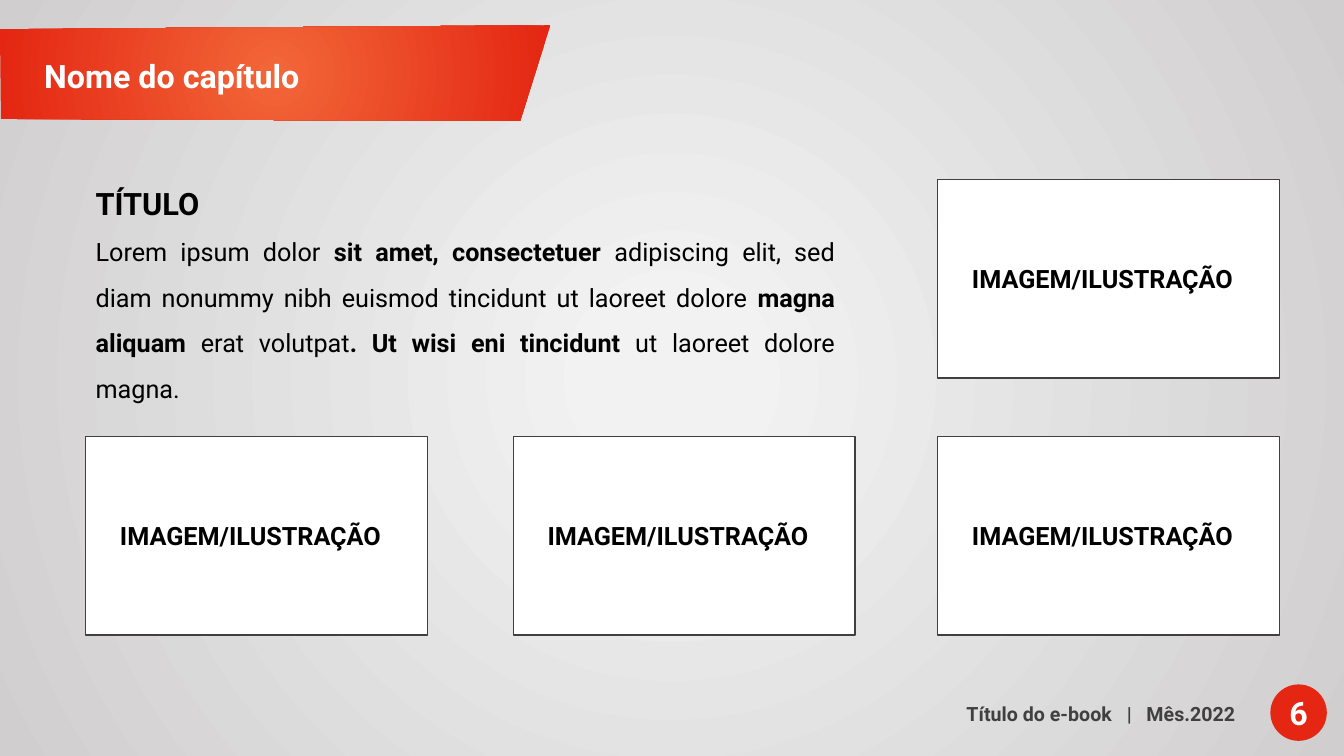
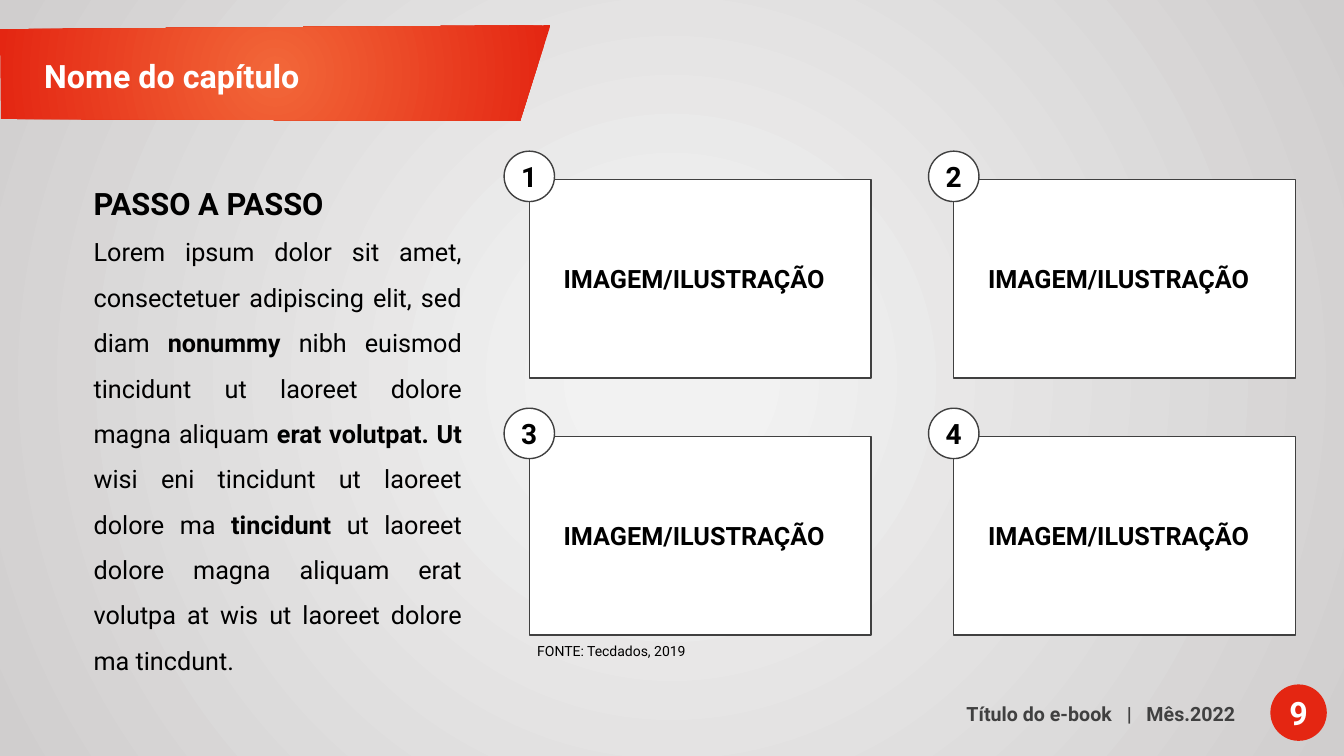
from itertools import product

from pptx import Presentation
from pptx.dml.color import RGBColor
from pptx.enum.shapes import MSO_SHAPE as Shape
from pptx.enum.text import MSO_ANCHOR as Anchor, MSO_AUTO_SIZE as AutoSize, PP_ALIGN as Align
from pptx.oxml import parse_xml
from pptx.oxml.ns import nsdecls, qn
from pptx.util import Inches, Pt

COLORS = {
    "white": "FFFFFF", "black": "000000", "gray": "404040", "red": "E42612",
    "orange": "F26739", "light": "F2F2F2", "silver": "D0CECE",
}
FONT = "Roboto"
WIDTH, HEIGHT = 13.33, 7.5
IMAGE_W, IMAGE_H = 3.39, 1.97
BADGE = 0.5
TOP_ROW, BOTTOM_ROW = 1.78, 4.33


def rgb(name):
    return RGBColor.from_string(COLORS[name])


def write(p, text, size=18, color="black", bold=True, spacing=0):
    """Add a run; spacing is extra space after each character, in points."""
    r = p.add_run()
    r.text = text
    r.font.name, r.font.size, r.font.bold = FONT, Pt(size), bold
    r.font.color.rgb = rgb(color)
    if spacing:
        r._r.get_or_add_rPr().set("spc", str(spacing * 100))


class Deck:
    def __init__(self):
        self.prs = Presentation()
        self.prs.slide_width, self.prs.slide_height = Inches(WIDTH), Inches(HEIGHT)
        self.s = None

    def style(self, sp, fill, line=None):
        sp.shadow.inherit = False
        sp.fill.solid()
        sp.fill.fore_color.rgb = rgb(fill)
        if line:
            sp.line.color.rgb = rgb(line)
            sp.line.width = Pt(1)
        else:
            sp.line.fill.background()

    def radial(self, sp, inner, outer, start=0):
        """Fill a shape with a circular gradient from its centre."""
        self.style(sp, outer)
        sp.fill.gradient()
        for stop, color, pos in zip(sp.fill.gradient_stops, (inner, outer), (start, 1)):
            stop.color.rgb = rgb(color)
            stop.position = pos
        grad = sp._element.spPr.find(qn("a:gradFill"))
        grad.remove(grad.find(qn("a:lin")))
        grad.append(parse_xml(
            f'<a:path {nsdecls("a")} path="circle">'
            '<a:fillToRect l="50000" t="50000" r="50000" b="50000"/></a:path>'))

    def shape(self, kind, x, y, w, h):
        return self.s.shapes.add_shape(kind, Inches(x), Inches(y), Inches(w), Inches(h))

    def textbox(self, x, y, w, h, align=Align.LEFT):
        """Add a text box and return its first paragraph and its frame."""
        tf = self.s.shapes.add_textbox(Inches(x), Inches(y), Inches(w), Inches(h)).text_frame
        tf.word_wrap = True
        tf.auto_size = AutoSize.SHAPE_TO_FIT_TEXT
        p = tf.paragraphs[0]
        p.alignment = align
        return p, tf

    def label(self, sp, text, align=Align.CENTER, indent=0, **fmt):
        """Write one line inside a shape, centred vertically."""
        tf = sp.text_frame
        tf.word_wrap = False
        tf.vertical_anchor = Anchor.MIDDLE
        tf.margin_left = Inches(indent)
        tf.margin_right = tf.margin_top = tf.margin_bottom = 0
        p = tf.paragraphs[0]
        p.alignment = align
        write(p, text, **fmt)

    def circle(self, x, y, d, text, fill, line=None, **fmt):
        sp = self.shape(Shape.OVAL, x, y, d, d)
        self.style(sp, fill, line)
        self.label(sp, text, **fmt)

    def image_box(self, x, y):
        sp = self.shape(Shape.RECTANGLE, x, y, IMAGE_W, IMAGE_H)
        self.style(sp, "white", "gray")
        self.label(sp, "IMAGEM/ILUSTRAÇÃO", align=Align.LEFT, indent=0.34)

    def band(self):
        corners = [(0, 0.29), (5.46, 0.25), (5.16, 1.2), (0.01, 1.18)]
        points = [(Inches(x), Inches(y)) for x, y in corners]
        fb = self.s.shapes.build_freeform(*points[0])
        fb.add_line_segments(points[1:], close=True)
        self.radial(fb.convert_to_shape(), "orange", "red")

    def footer(self, number):
        p, _ = self.textbox(5.7, 6.91, 6.65, 0.34, Align.RIGHT)
        for text, spacing in (("Título do e-book", 0), (" |", 7), (" Mês.2022", 0)):
            write(p, text, size=14, color="gray", spacing=spacing)
        self.circle(12.6, 6.79, 0.56, str(number), "red", size=23, color="white")

    def slide(self, chapter, number):
        self.s = self.prs.slides.add_slide(self.prs.slide_layouts[6])
        self.radial(self.shape(Shape.RECTANGLE, 0, 0, WIDTH, HEIGHT), "light", "silver", 0.09)
        self.band()
        p, _ = self.textbox(0.34, 0.51, 3.06, 0.49)
        write(p, chapter, size=23, color="white")
        self.footer(number)

    def body(self, x, w, h, heading, text):
        """Add a heading and a justified paragraph; *stars* mark bold words."""
        p, tf = self.textbox(x, 1.6, w, h, Align.JUSTIFY)
        write(p, heading, size=22)
        p.line_spacing = 1.5
        p = tf.add_paragraph()
        p.alignment, p.line_spacing = Align.JUSTIFY, 1.5
        for i, part in enumerate(text.split("*")):
            write(p, part, bold=i % 2 == 1)


def topic_slide(deck):
    deck.slide("Nome do capítulo", 6)
    deck.body(0.85, 7.53, 1.97, "TÍTULO",
              "Lorem ipsum dolor *sit amet, consectetuer *adipiscing elit, sed diam "
              "nonummy nibh euismod tincidunt ut laoreet dolore *magna aliquam *erat "
              "volutpat*. Ut wisi eni tincidunt *ut laoreet dolore magna.")
    deck.image_box(9.3, TOP_ROW)
    for x in (0.85, 5.09, 9.3):
        deck.image_box(x, BOTTOM_ROW)


def steps_slide(deck):
    deck.slide("Nome do capítulo", 9)
    deck.body(0.83, 3.85, 4.7, "PASSO A PASSO",
              "Lorem ipsum dolor sit amet, consectetuer adipiscing elit, sed diam "
              "*nonummy *nibh euismod tincidunt ut laoreet dolore magna aliquam "
              "*erat volutpat. Ut *wisi eni tincidunt ut laoreet dolore ma *tincidunt* "
              "ut laoreet dolore magna aliquam erat volutpa at wis ut laoreet dolore "
              "ma tincdunt.")
    for step, (y, x) in enumerate(product((TOP_ROW, BOTTOM_ROW), (5.25, 9.46)), 1):
        deck.image_box(x, y)
        deck.circle(x - BADGE / 2, y - 0.28, BADGE, str(step), "white", "gray", size=20)
    p, _ = deck.textbox(5.23, 6.33, 4.25, 0.27)
    write(p, "FONTE: Tecdados, 2019", size=10, bold=False)


def main():
    deck = Deck()
    topic_slide(deck)
    steps_slide(deck)
    deck.prs.save("out.pptx")


if __name__ == "__main__":
    main()
